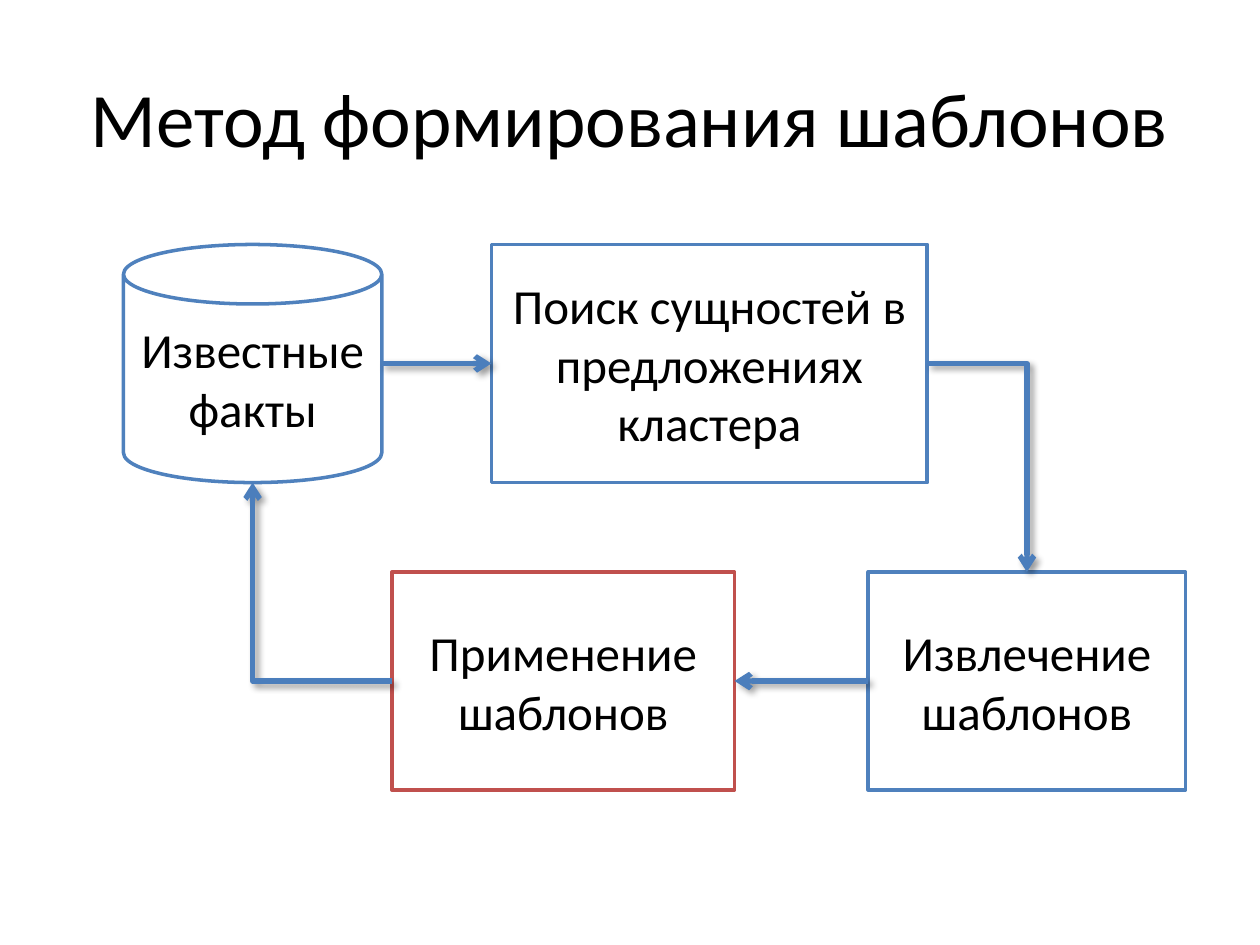
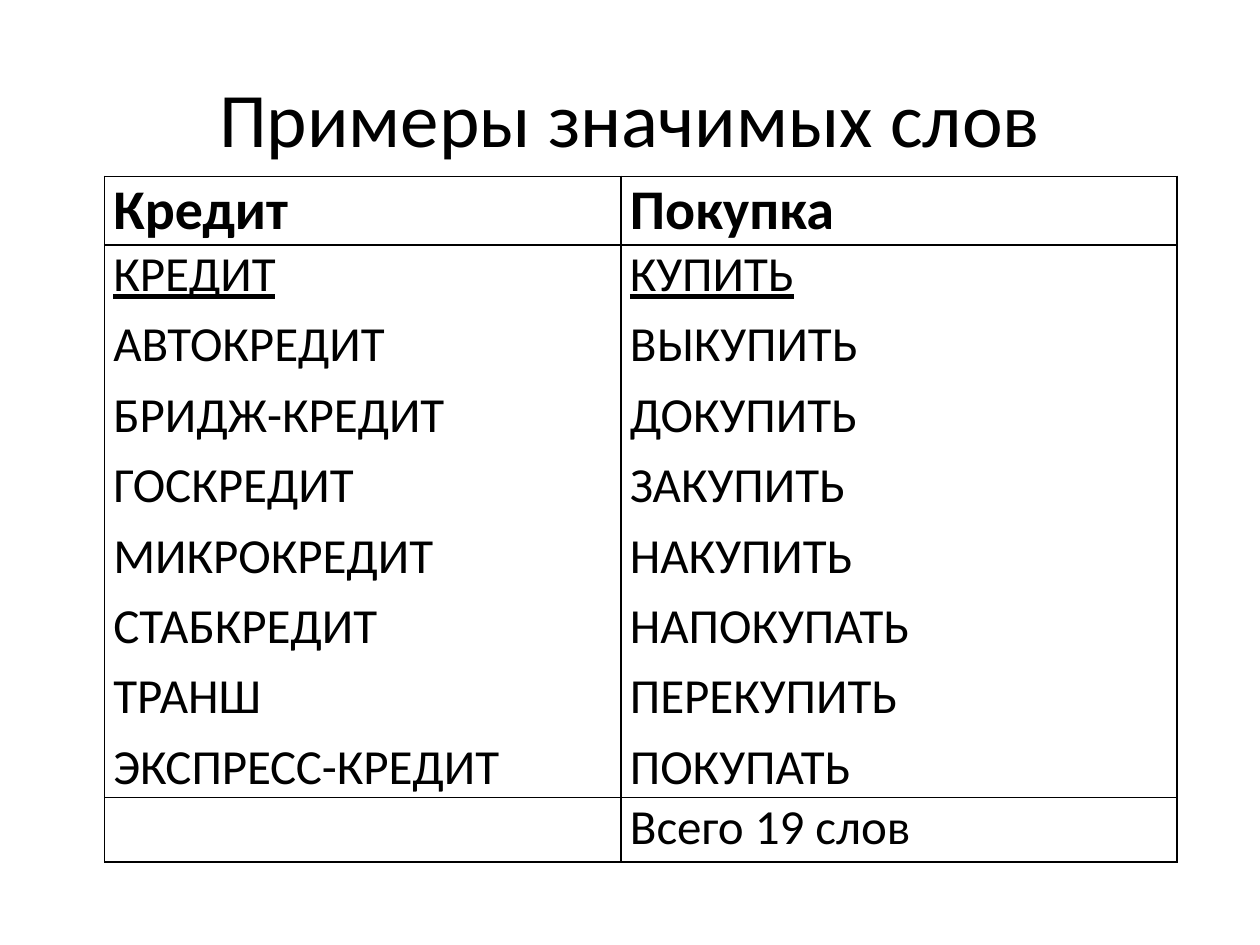
"""Build two slides: the pattern-forming cycle and a table of significant words."""
from lxml.etree import SubElement
from pptx import Presentation
from pptx.dml.color import RGBColor
from pptx.enum.shapes import MSO_CONNECTOR as LINK, MSO_SHAPE as SHAPE
from pptx.enum.text import MSO_ANCHOR as ANCHOR, PP_ALIGN as ALIGN
from pptx.oxml import parse_xml
from pptx.oxml.ns import nsdecls, qn
from pptx.util import Inches, Pt

BLACK = RGBColor(0x00, 0x00, 0x00)
WHITE = RGBColor(0xFF, 0xFF, 0xFF)
BLUE = RGBColor(0x4F, 0x81, 0xBD)
RED = RGBColor(0xC0, 0x50, 0x4D)
ARROW_BLUE = RGBColor(0x4B, 0x7E, 0xBC)
FONT = "Calibri"
SHADOW = (
    f'<a:effectLst {nsdecls("a")}><a:outerShdw blurRad="50800" dist="38100" '
    'dir="2700000" algn="tl" rotWithShape="0"><a:srgbClr val="000000">'
    '<a:alpha val="40000"/></a:srgbClr></a:outerShdw></a:effectLst>'
)


def style_text(paragraph, size, bold=False, underline=False):
    for run in paragraph.runs:
        run.font.name = FONT
        run.font.size = Pt(size)
        run.font.bold = bold
        run.font.underline = underline
        run.font.color.rgb = BLACK


def add_titled_slide(heading):
    slide = prs.slides.add_slide(prs.slide_layouts[5])
    title = slide.shapes.title
    title.left, title.top = Inches(0.5), Inches(0.3)
    title.width, title.height = Inches(9), Inches(1.25)
    title.text_frame.text = heading
    title.text_frame.vertical_anchor = ANCHOR.MIDDLE
    title.text_frame.paragraphs[0].alignment = ALIGN.CENTER
    style_text(title.text_frame.paragraphs[0], 44)
    return slide


prs = Presentation()
prs.slide_width, prs.slide_height = Inches(10), Inches(7.5)

cycle_slide = add_titled_slide("Метод формирования шаблонов")
UPPER, LOWER = (1.94, 1.89), (4.54, 1.73)
steps = []
for text, kind, left, width, (top, height), outline in [
    ("Известные факты", SHAPE.CAN, 0.98, 2.05, UPPER, BLUE),
    ("Поиск сущностей в предложениях кластера", SHAPE.RECTANGLE, 3.9, 3.46, UPPER, BLUE),
    ("Извлечение шаблонов", SHAPE.RECTANGLE, 6.89, 2.52, LOWER, BLUE),
    ("Применение шаблонов", SHAPE.RECTANGLE, 3.11, 2.72, LOWER, RED),
]:
    step = cycle_slide.shapes.add_shape(
        kind, Inches(left), Inches(top), Inches(width), Inches(height))
    step.shadow.inherit = False
    step.fill.solid()
    step.fill.fore_color.rgb = WHITE
    step.line.color.rgb = outline
    step.line.width = Pt(2)
    step.text_frame.text = text
    step.text_frame.word_wrap = True
    step.text_frame.vertical_anchor = ANCHOR.MIDDLE
    step.text_frame.paragraphs[0].alignment = ALIGN.CENTER
    style_text(step.text_frame.paragraphs[0], 28)
    steps.append(step)

facts, search, extraction, application = steps
SIDES = {"top": (0.5, 0), "left": (0, 0.5), "bottom": (0.5, 1), "right": (1, 0.5)}
RECT_SITES = {"top": 0, "left": 1, "bottom": 2, "right": 3}
CAN_SITES = {"top": 1, "left": 2, "bottom": 3, "right": 4}
for source, source_side, target, target_side in [
    (facts, "right", search, "left"),
    (search, "right", extraction, "top"),
    (extraction, "left", application, "right"),
    (application, "left", facts, "bottom"),
]:
    ends = []
    for step, side in [(source, source_side), (target, target_side)]:
        across, down = SIDES[side]
        ends.append((int(step.left + across * step.width), int(step.top + down * step.height)))
    bent = target_side in ("top", "bottom")
    turned = bent and ends[1][0] < ends[0][0]
    begin, end = reversed(ends) if turned else ends
    arrow = cycle_slide.shapes.add_connector(
        LINK.ELBOW if bent else LINK.STRAIGHT, *begin, *end)
    arrow.line.color.rgb = ARROW_BLUE
    arrow.line.width = Pt(3)
    properties = arrow._element.spPr
    if bent:
        properties.find(qn("a:prstGeom")).set("prst", "bentConnector2")
    if turned:
        properties.find(qn("a:xfrm")).set("rot", "10800000")
    SubElement(properties.find(qn("a:ln")), qn("a:tailEnd"), type="arrow")
    properties.append(parse_xml(SHADOW))
    glue = arrow._element.find(".//" + qn("p:cNvCxnSpPr"))
    for tag, step, side in [("a:stCxn", source, source_side), ("a:endCxn", target, target_side)]:
        sites = CAN_SITES if step is facts else RECT_SITES
        SubElement(glue, qn(tag), id=str(step.shape_id), idx=str(sites[side]))

words_slide = add_titled_slide("Примеры значимых слов")
CREDIT_WORDS = ["КРЕДИТ", "АВТОКРЕДИТ", "БРИДЖ-КРЕДИТ", "ГОСКРЕДИТ",
                "МИКРОКРЕДИТ", "СТАБКРЕДИТ", "ТРАНШ", "ЭКСПРЕСС-КРЕДИТ"]
PURCHASE_WORDS = ["КУПИТЬ", "ВЫКУПИТЬ", "ДОКУПИТЬ", "ЗАКУПИТЬ",
                  "НАКУПИТЬ", "НАПОКУПАТЬ", "ПЕРЕКУПИТЬ", "ПОКУПАТЬ"]
word_rows = [
    (["Кредит"], ["Покупка"]),
    (CREDIT_WORDS, PURCHASE_WORDS),
    ([], ["Всего 19 слов"]),
]
words = words_slide.shapes.add_table(
    3, 2, Inches(0.83), Inches(1.4), Inches(8.51), Inches(4.87)).table
words.first_row = words.horz_banding = False
for column, width in zip(words.columns, (4.1, 4.41)):
    column.width = Inches(width)
for row, height in zip(words.rows, (0.49, 3.87, 0.51)):
    row.height = Inches(height)

for row_index, row_words in enumerate(word_rows):
    for column_index, entries in enumerate(row_words):
        cell = words.cell(row_index, column_index)
        cell.margin_left = cell.margin_right = Inches(0.07)
        cell.margin_top = cell.margin_bottom = 0
        cell_properties = cell._tc.get_or_add_tcPr()
        for edge in ("a:lnL", "a:lnR", "a:lnT", "a:lnB"):
            border = SubElement(cell_properties, qn(edge), w=str(Pt(1)))
            SubElement(SubElement(border, qn("a:solidFill")), qn("a:srgbClr"), val=str(BLACK))
        cell.fill.background()
        cell.text_frame.text = "\n".join(entries)
        for number, paragraph in enumerate(cell.text_frame.paragraphs):
            paragraph.space_after = Pt(6)
            is_header = row_index == 0
            style_text(paragraph, 32 if is_header else 28, bold=is_header,
                       underline=row_index == 1 and number == 0)

prs.save("out.pptx")
